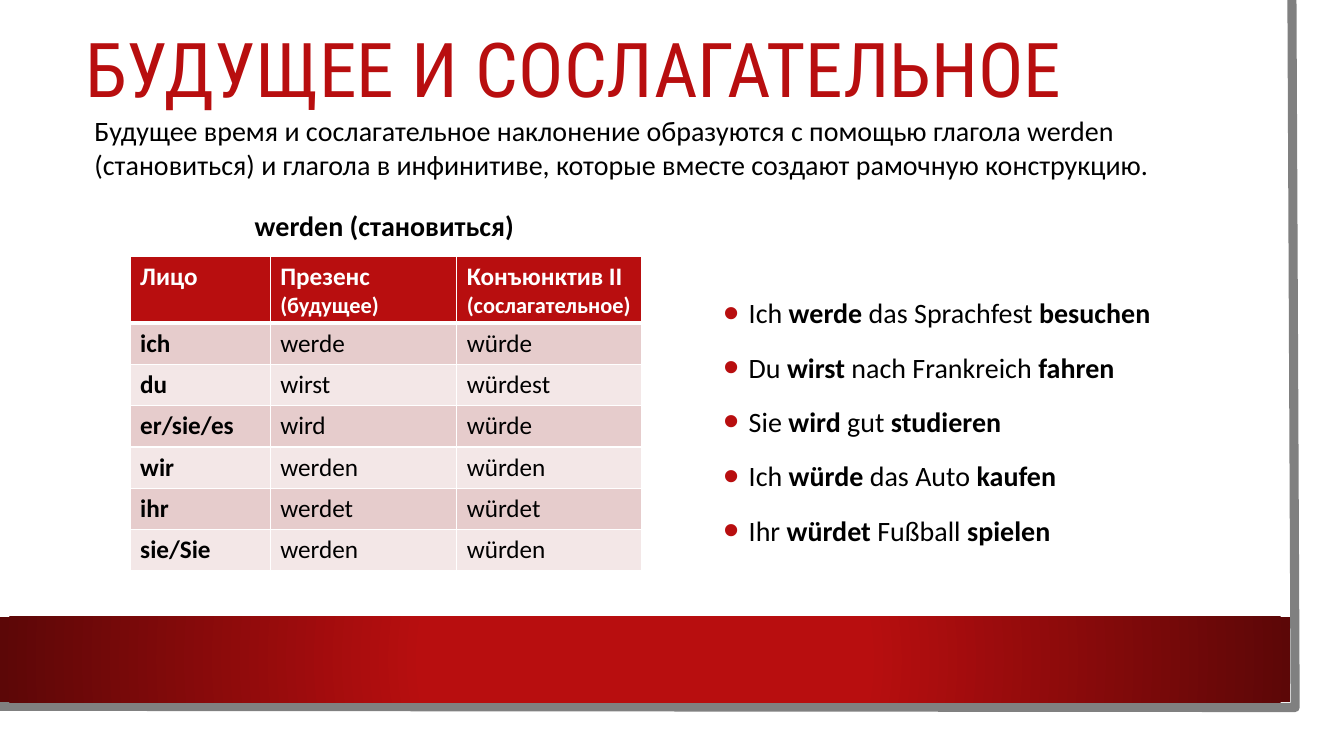
import pptx
import pptx.dml.color
import pptx.enum.shapes
import pptx.enum.text
import pptx.oxml
import pptx.oxml.ns
import pptx.util
import lxml.etree

Cm = pptx.util.Cm
Pt = pptx.util.Pt
RED, DARK, GREY, BLACK, WHITE = "B80E0F", "5C0707", "808080", "000000", "FFFFFF"
BANDS = ("E6CCCC", "F3E7E7")
BODY = {"name": "Calibri", "size": Pt(20), "color": BLACK}

INTRO = ("Будущее время и сослагательное наклонение образуются с помощью глагола werden "
         "(становиться) и глагола в инфинитиве, которые вместе создают рамочную конструкцию.")
HEADS = (
    ([("Лицо", 18)],),
    ([("Презенс ", 18), ("(будущее)", 16)],),
    ([("Конъюнктив II", 18)], [("(сослагательное)", 16)]),
)
FORMS = (
    ("ich", "werde", "würde"),
    ("du", "wirst", "würdest"),
    ("er/sie/es", "wird", "würde"),
    ("wir", "werden", "würden"),
    ("ihr", "werdet", "würdet"),
    ("sie/Sie", "werden", "würden"),
)
LINES = (
    ("Ich ", "werde", " das Sprachfest ", "besuchen"),
    ("Du ", "wirst", " nach Frankreich ", "fahren"),
    ("Sie ", "wird", " gut ", "studieren"),
    ("Ich ", "würde", " das Auto ", "kaufen"),
    ("Ihr ", "würdet ", "Fußball ", "spielen"),
)


def rgb(code):
    """Turn a hex string into a colour."""
    return pptx.dml.color.RGBColor.from_string(code)


def paint(fill, code):
    """Give a fill one solid colour."""
    fill.solid()
    fill.fore_color.rgb = rgb(code)


def write(para, text, **form):
    """Add a run and set its font from the format values."""
    run = para.add_run()
    run.text = text
    for key, value in form.items():
        if key == "color":
            run.font.color.rgb = rgb(value)
        else:
            setattr(run.font, key, value)


def frame(slide, box, **form):
    """Add a text box and return its text frame."""
    text = slide.shapes.add_textbox(*map(Cm, box)).text_frame
    for key, value in {"word_wrap": True, **form}.items():
        setattr(text, key, value)
    return text


def block(slide, box, code):
    """Add a plain rectangle without line or shadow."""
    shape = slide.shapes.add_shape(pptx.enum.shapes.MSO_SHAPE.RECTANGLE, *map(Cm, box))
    shape.shadow.inherit = False
    shape.line.fill.background()
    paint(shape.fill, code)
    return shape


def glow(shape, stops):
    """Replace the fill with a gradient that spreads from the centre."""
    marks = "".join(f'<a:gs pos="{pos * 1000}"><a:srgbClr val="{code}"/></a:gs>'
                    for pos, code in stops)
    grad = pptx.oxml.parse_xml(
        f'<a:gradFill {pptx.oxml.ns.nsdecls("a")} rotWithShape="1"><a:gsLst>{marks}</a:gsLst>'
        '<a:path path="circle"><a:fillToRect l="50000" t="50000" r="50000" b="50000"/>'
        '</a:path></a:gradFill>')
    props = shape.element.spPr
    props.replace(props.find(pptx.oxml.ns.qn("a:solidFill")), grad)


def sheet(slide, box):
    """Draw the white page, its grey edge and the red band."""
    left, top, wide, high = box
    block(slide, (left, top, wide + 0.76, high + 0.64), WHITE)
    right, base = left + wide + 0.05, top + high
    pen = slide.shapes.build_freeform(Cm(right), Cm(top))
    pen.add_line_segments([(Cm(right + 0.08), Cm(base)), (Cm(left - 0.08), Cm(base - 0.03))],
                          close=False)
    edge = pen.convert_to_shape()
    edge.shadow.inherit = False
    edge.fill.background()
    edge.line.color.rgb = rgb(GREY)
    edge.line.width = Pt(6.5)
    band = block(slide, (left, base - 2.29, wide, 2.16), RED)
    glow(band, ((34, RED), (100, DARK)))


def title(slide, box, text):
    """Write the heading of the slide."""
    para = frame(slide, box, vertical_anchor=pptx.enum.text.MSO_ANCHOR.MIDDLE).paragraphs[0]
    para.line_spacing = 0.9
    write(para, text, name="Roboto Condensed", size=Pt(54), color=RED)


def note(slide, box, text, bold=False, wrap=True):
    """Write one paragraph of body text."""
    write(frame(slide, box, word_wrap=wrap).paragraphs[0], text, bold=bold, **BODY)


def dot(para):
    """Give a paragraph a large red bullet."""
    props = para._p.get_or_add_pPr()
    props.set("marL", str(Cm(0.64)))
    props.set("indent", str(-Cm(0.64)))
    qn = pptx.oxml.ns.qn
    tone = lxml.etree.SubElement(props, qn("a:buClr"))
    lxml.etree.SubElement(tone, qn("a:srgbClr"), val=RED)
    lxml.etree.SubElement(props, qn("a:buSzPct"), val="160000")
    lxml.etree.SubElement(props, qn("a:buFont"), typeface="Arial")
    lxml.etree.SubElement(props, qn("a:buChar"), char="•")


def samples(slide, box, lines):
    """List the sample sentences with every second part in bold."""
    text = frame(slide, box, vertical_anchor=pptx.enum.text.MSO_ANCHOR.MIDDLE)
    for row, parts in enumerate(lines):
        para = text.add_paragraph() if row else text.paragraphs[0]
        dot(para)
        para.line_spacing = 1.2
        para.space_before = Pt(10 if row else 0)
        for spot, part in enumerate(parts):
            write(para, part, bold=spot % 2 == 1, **BODY)


def rule(cell, **sides):
    """Draw white cell borders with the given widths in points."""
    props = cell._tc.get_or_add_tcPr()
    for side, width in sides.items():
        props.append(pptx.oxml.parse_xml(
            f'<a:ln{side} {pptx.oxml.ns.nsdecls("a")} w="{Pt(width)}"><a:solidFill>'
            f'<a:srgbClr val="{WHITE}"/></a:solidFill></a:ln{side}>'))


def verbs(slide, box, heads, forms):
    """Build the table of verb forms."""
    grid = slide.shapes.add_table(len(forms) + 1, len(heads), *map(Cm, box)).table
    for col, wide in zip(grid.columns, (3.53, 4.7, 4.67)):
        col.width = Cm(wide)
    for line in grid.rows:
        line.height = Cm(1.04)
    body = [[([(word, 18)],) for word in form] for form in forms]
    for row, cells in enumerate([heads, *body]):
        for col, paras in enumerate(cells):
            cell = grid.cell(row, col)
            rule(cell, L=1, R=1, T=3 if row == 1 else 1, B=1 if row else 3)
            paint(cell.fill, BANDS[(row - 1) % 2] if row else RED)
            for spot, runs in enumerate(paras):
                text = cell.text_frame
                para = text.add_paragraph() if spot else text.paragraphs[0]
                for word, size in runs:
                    write(para, word, name="Calibri", size=Pt(size),
                          bold=row == 0 or col == 0, color=BLACK if row else WHITE)


def main():
    """Build and save the slide."""
    deck = pptx.Presentation()
    deck.slide_width, deck.slide_height = Cm(33.87), Cm(19.05)
    slide = deck.slides.add_slide(deck.slide_layouts[6])
    sheet(slide, (0, 0, 32.51, 17.83))
    title(slide, (1.9, 0.23, 28.88, 3.2), "БУДУЩЕЕ И СОСЛАГАТЕЛЬНОЕ")
    samples(slide, (17.98, 6.05, 11.68, 8.97), LINES)
    verbs(slide, (3.28, 6.45, 12.9, 7.28), HEADS, FORMS)
    note(slide, (6.17, 5.13, 7.11, 1.12), "werden (становиться)", bold=True, wrap=False)
    note(slide, (2.13, 2.74, 27.18, 1.96), INTRO)
    deck.save("out.pptx")


if __name__ == "__main__":
    main()
